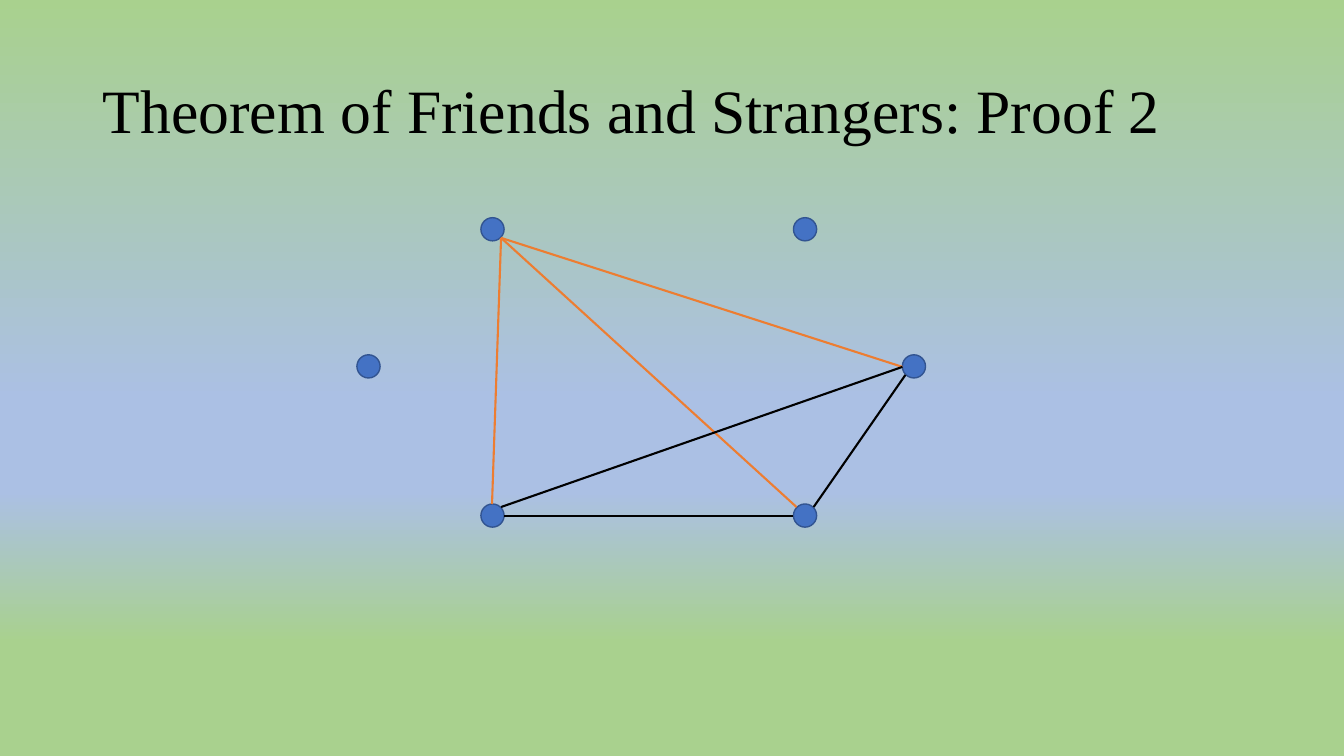
from dataclasses import dataclass
from math import cos, radians, sin

from lxml import etree
from pptx import Presentation
from pptx.dml.color import RGBColor
from pptx.enum.shapes import MSO_CONNECTOR, MSO_SHAPE
from pptx.enum.text import MSO_ANCHOR
from pptx.oxml.ns import qn
from pptx.util import Pt

PX = 9144
DOT = 23
OVAL = MSO_SHAPE.OVAL
STRAIGHT = MSO_CONNECTOR.STRAIGHT
MIDDLE = MSO_ANCHOR.MIDDLE
FONT = "Times New Roman"
COLORS = {
    "green": "A9D18E",
    "lavender": "ABC0E4",
    "dot": "4472C4",
    "rim": "325491",
    "orange": "ED7D31",
    "black": "000000",
}
BACKGROUND = [(0, "green"), (53, "lavender"), (65, "lavender"), (85, "green")]


@dataclass(frozen=True)
class Person:
    left: int
    top: int

    def rim_point(self, angle: int) -> tuple[int, int]:
        r = DOT / 2
        return (
            round(self.left + r + r * cos(radians(angle))),
            round(self.top + r + r * sin(radians(angle))),
        )


@dataclass(frozen=True)
class Edge:
    start: str
    start_angle: int
    end: str
    end_angle: int
    color: str


PEOPLE = {
    "left": Person(354, 352),
    "top left": Person(477, 216),
    "top right": Person(787, 216),
    "right": Person(895, 352),
    "bottom left": Person(477, 500),
    "bottom right": Person(787, 500),
}
EDGES = [
    Edge("top left", 45, "bottom right", 225, "orange"),
    Edge("top left", 45, "bottom left", 270, "orange"),
    Edge("top left", 45, "right", 180, "orange"),
    Edge("right", 135, "bottom right", 315, "black"),
    Edge("bottom right", 180, "bottom left", 0, "black"),
    Edge("right", 180, "bottom left", 315, "black"),
]


def rgb(name: str) -> RGBColor:
    return RGBColor.from_string(COLORS[name])


def paint_background(s) -> None:
    fill = s.background.fill
    fill.gradient()
    fill.gradient_angle = 270
    stops = s.element.find(".//" + qn("a:gsLst"))
    for old in list(stops):
        stops.remove(old)
    for percent, color in BACKGROUND:
        stop = etree.SubElement(stops, qn("a:gs"), pos=str(percent * 1000))
        etree.SubElement(stop, qn("a:srgbClr"), val=COLORS[color])


def add_title(s, text: str) -> None:
    sp = s.shapes.add_textbox(92 * PX, 40 * PX, 1150 * PX, 145 * PX)
    tf = sp.text_frame
    tf.word_wrap = True
    tf.vertical_anchor = MIDDLE
    p = tf.paragraphs[0]
    p.line_spacing = 0.9
    r = p.add_run()
    r.text = text
    r.font.name = FONT
    r.font.size = Pt(44)
    r.font.color.rgb = rgb("black")


def add_person(s, person: Person) -> None:
    sp = s.shapes.add_shape(
        OVAL, person.left * PX, person.top * PX, DOT * PX, DOT * PX
    )
    sp.shadow.inherit = False
    sp.fill.solid()
    sp.fill.fore_color.rgb = rgb("dot")
    sp.line.color.rgb = rgb("rim")
    sp.line.width = Pt(1)


def add_edge(s, edge: Edge) -> None:
    x1, y1 = PEOPLE[edge.start].rim_point(edge.start_angle)
    x2, y2 = PEOPLE[edge.end].rim_point(edge.end_angle)
    line = s.shapes.add_connector(STRAIGHT, x1 * PX, y1 * PX, x2 * PX, y2 * PX)
    line.line.color.rgb = rgb(edge.color)
    line.line.width = Pt(1.5)
    etree.SubElement(line.element.spPr, qn("a:effectLst"))


def main() -> None:
    prs = Presentation()
    prs.slide_width = 1333 * PX
    prs.slide_height = 750 * PX
    s = prs.slides.add_slide(prs.slide_layouts[6])
    paint_background(s)
    add_title(s, "Theorem of Friends and Strangers: Proof 2")
    for person in PEOPLE.values():
        add_person(s, person)
    for edge in EDGES:
        add_edge(s, edge)
    prs.save("out.pptx")


if __name__ == "__main__":
    main()
